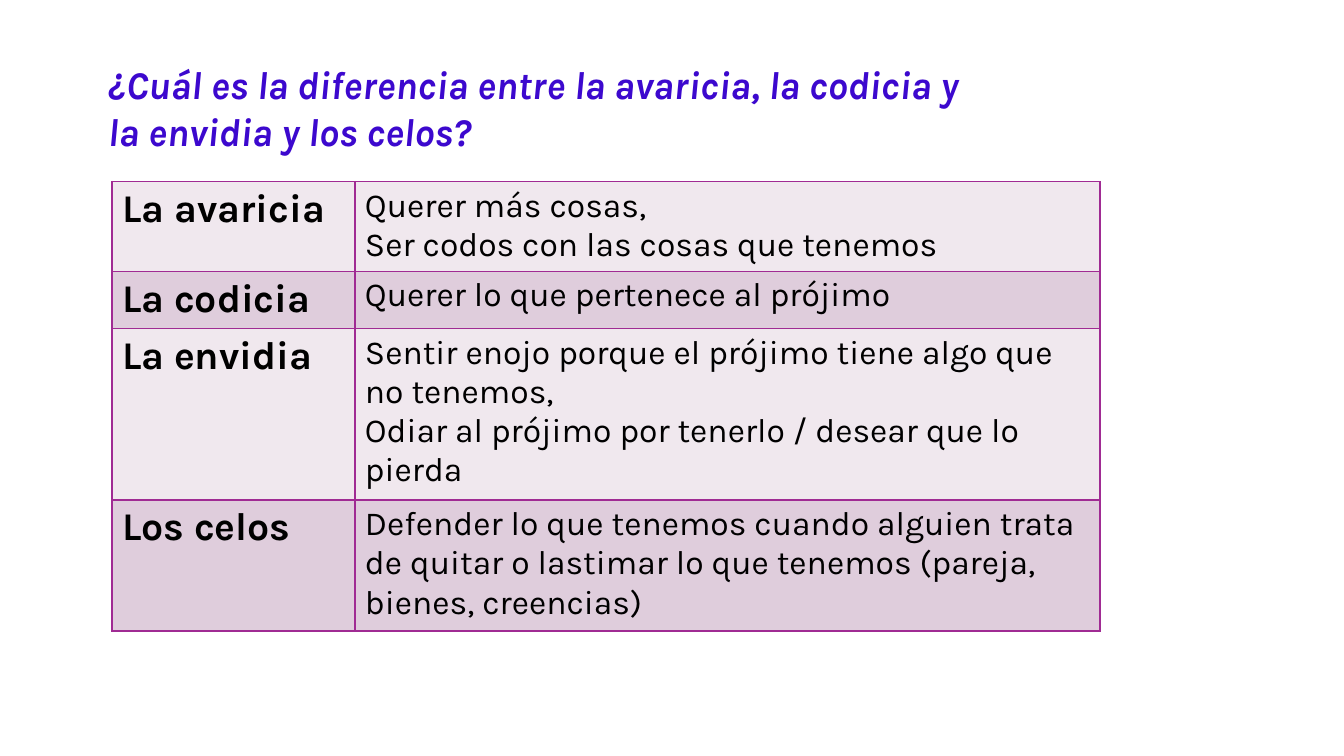
import pptx
import pptx.dml.color
import pptx.enum.text
import pptx.util
from lxml import etree
from pptx.oxml.ns import qn

COLORS = {
    "background": "FFFFFF",
    "title": "3C08CE",
    "text": "000000",
    "border": "A02B93",
    "light": "F0E8EE",
    "dark": "DFCDDC",
}
TITLE = "¿Cuál es la diferencia entre la avaricia, la codicia y la envidia y los celos?"
DEFINITIONS = [
    ("La avaricia", ["Querer más cosas,", "Ser codos con las cosas que tenemos"]),
    ("La codicia", ["Querer lo que pertenece al prójimo"]),
    ("La envidia", [
        "Sentir enojo porque el prójimo tiene algo que no tenemos,",
        "Odiar al prójimo por tenerlo / desear que lo pierda",
    ]),
    ("Los celos", [
        "Defender lo que tenemos cuando alguien trata de quitar o lastimar "
        "lo que tenemos (pareja, bienes, creencias)",
    ]),
]
TERM_WIDTH, MEANING_WIDTH = 18.08, 55.44
ROW_HEIGHTS = [11.87, 7.6, 22.67, 17.33]


def rgb(name):
    return pptx.dml.color.RGBColor.from_string(COLORS[name])


class SlideBuilder:
    font = "Karla"
    large = 28
    medium = 24
    grid_columns = 100
    grid_rows = 100

    def __init__(self, deck):
        self.deck = deck
        self.page = deck.slides.add_slide(deck.slide_layouts[5])
        fill = self.page.background.fill
        fill.solid()
        fill.fore_color.rgb = rgb("background")

    def across(self, columns):
        return round(self.deck.slide_width * columns / self.grid_columns)

    def down(self, rows):
        return round(self.deck.slide_height * rows / self.grid_rows)

    def place(self, left, top, width, height):
        return self.across(left), self.down(top), self.across(width), self.down(height)

    def add_lines(self, frame, lines, size, color="text", bold=False, italic=False):
        for index, line in enumerate(lines):
            para = frame.add_paragraph() if index else frame.paragraphs[0]
            para.alignment = pptx.enum.text.PP_ALIGN.LEFT
            span = para.add_run()
            span.text = line
            span.font.name = self.font
            span.font.size = pptx.util.Pt(size)
            span.font.bold = bold
            span.font.italic = italic
            span.font.color.rgb = rgb(color)

    def title(self, text, *area):
        box = self.page.shapes.title
        box.left, box.top, box.width, box.height = self.place(*area)
        frame = box.text_frame
        frame.word_wrap = True
        frame.auto_size = pptx.enum.text.MSO_AUTO_SIZE.NONE
        frame.vertical_anchor = pptx.enum.text.MSO_ANCHOR.TOP
        self.add_lines(frame, [text], self.large, "title", bold=True, italic=True)

    def cell(self, cell, lines, size, fill, bold):
        properties = cell._tc.get_or_add_tcPr()
        for side in ("lnL", "lnR", "lnT", "lnB"):
            line = etree.SubElement(properties, qn(f"a:{side}"), w=str(pptx.util.Pt(1)))
            solid = etree.SubElement(line, qn("a:solidFill"))
            etree.SubElement(solid, qn("a:srgbClr"), val=COLORS["border"])
        cell.fill.solid()
        cell.fill.fore_color.rgb = rgb(fill)
        self.add_lines(cell.text_frame, lines, size, bold=bold)

    def table(self, entries, left, top, widths, heights):
        area = self.place(left, top, sum(widths), sum(heights))
        table = self.page.shapes.add_table(len(entries), len(widths), *area).table
        table.first_row = False
        table.horz_banding = False
        for column, width in zip(table.columns, widths):
            column.width = self.across(width)
        for index, (term, meaning) in enumerate(entries):
            table.rows[index].height = self.down(heights[index])
            fill = "dark" if index % 2 else "light"
            self.cell(table.cell(index, 0), [term], self.large, fill, bold=True)
            self.cell(table.cell(index, 1), meaning, self.medium, fill, bold=False)


def main():
    deck = pptx.Presentation()
    deck.slide_width = pptx.util.Inches(13.33)
    deck.slide_height = pptx.util.Inches(7.5)
    builder = SlideBuilder(deck)
    builder.title(TITLE, 7.28, 7.33, 67.74, 26.53)
    builder.table(DEFINITIONS, 8.33, 24, [TERM_WIDTH, MEANING_WIDTH], ROW_HEIGHTS)
    deck.save("out.pptx")


if __name__ == "__main__":
    main()
